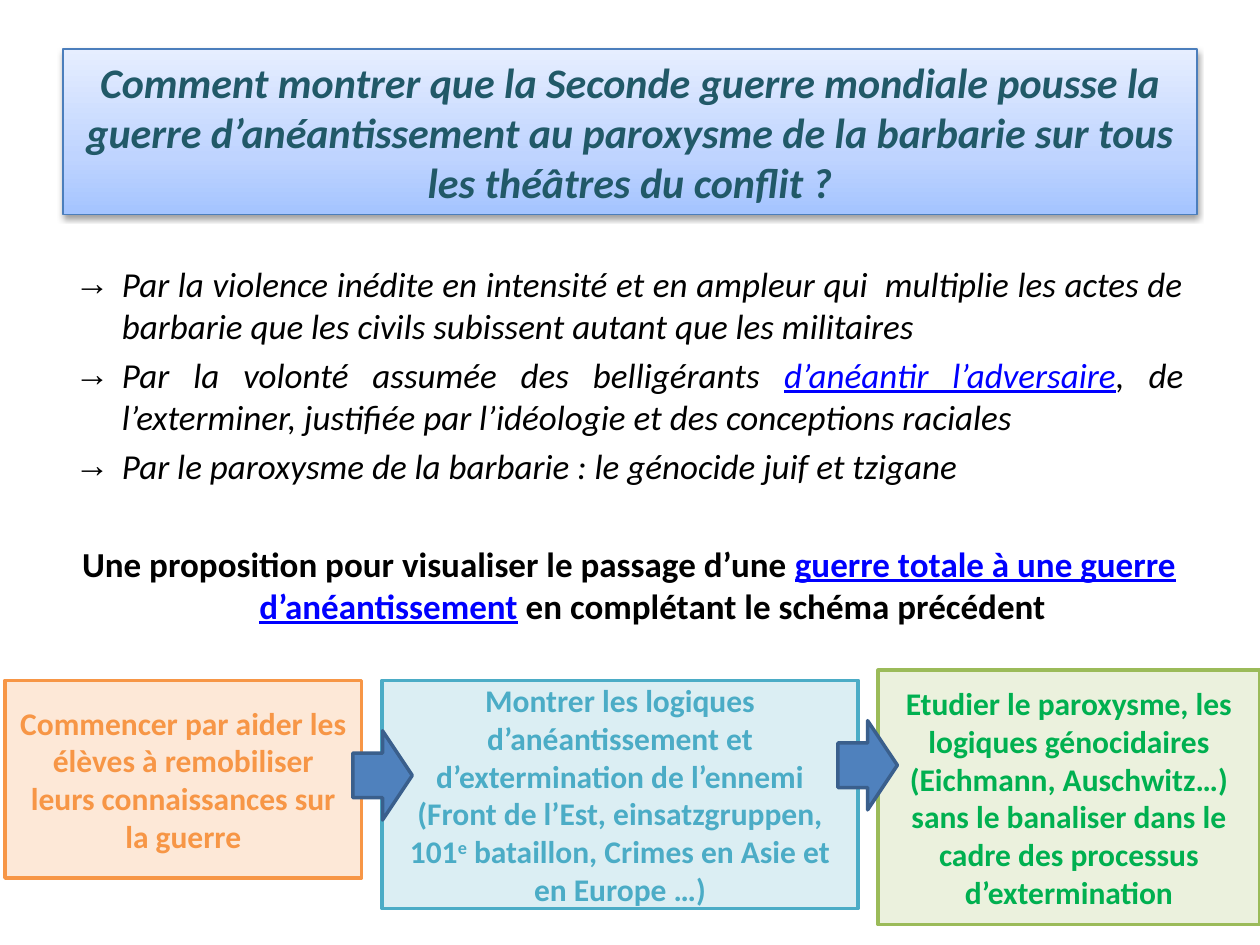
import copy

import pptx
import pptx.util
import pptx.dml.color
import pptx.enum.shapes
import pptx.enum.text
import pptx.oxml
import pptx.oxml.ns

Pt = pptx.util.Pt
SHAPE = pptx.enum.shapes.MSO_SHAPE
ALIGN = pptx.enum.text.PP_ALIGN
ANCHOR = pptx.enum.text.MSO_ANCHOR
NS = pptx.oxml.ns.nsdecls("a")
FONT = "Calibri"

COLORS = {
    "title": "215968", "title_line": "4B7EBC",
    "grad_low": "A4C4FF", "grad_mid": "BFD4FF", "grad_high": "E6EEFF",
    "text": "000000", "link": "0000FF",
    "orange": "F79646", "teal": "4BACC6", "olive": "9BBB59", "green": "00B050",
    "arrow": "4F81BD", "arrow_line": "3A5F8C",
}


def rgb(name):
    return pptx.dml.color.RGBColor.from_string(COLORS[name])


def add_run(p, text, size=18, color="text", bold=False, italic=False,
            underline=False, raised=False):
    r = p.add_run()
    r.text = text
    f = r.font
    f.name, f.size, f.bold, f.italic, f.underline = FONT, Pt(size), bold, italic, underline
    f.color.rgb = rgb(color)
    if raised:
        r._r.get_or_add_rPr().set("baseline", "30000")
    return r


def place(sp, box):
    sp.left, sp.top, sp.width, sp.height = (Pt(v) for v in box)


def set_line(sp, color, width):
    sp.line.color.rgb = rgb(color)
    sp.line.width = Pt(width)


def title_banner(s, box):
    sp = s.shapes.title
    place(sp, box)
    # Three-stop gradient, light at the top
    sp.fill.gradient()
    sp.fill.gradient_angle = 90
    gs = sp.fill.gradient_stops[0]._gs
    gs.addnext(copy.deepcopy(gs))
    stops = ((0, "grad_low"), (0.35, "grad_mid"), (1, "grad_high"))
    for stop, (pos, color) in zip(sp.fill.gradient_stops, stops):
        stop.position = pos
        stop.color.rgb = rgb(color)
    set_line(sp, "title_line", 0.75)
    # Soft shadow below
    sp.shadow.inherit = False
    sp._element.spPr.find(pptx.oxml.ns.qn("a:effectLst")).append(pptx.oxml.parse_xml(
        f'<a:outerShdw {NS} blurRad="{Pt(3.1)}" dist="{Pt(1.6)}" dir="5400000" '
        'rotWithShape="0"><a:srgbClr val="000000"><a:alpha val="38000"/>'
        '</a:srgbClr></a:outerShdw>'))
    tf = sp.text_frame
    tf.word_wrap = True
    tf.auto_size = pptx.enum.text.MSO_AUTO_SIZE.NONE
    tf.vertical_anchor = ANCHOR.MIDDLE
    p = tf.paragraphs[0]
    p.alignment = ALIGN.CENTER
    add_run(p, "Comment montrer que la Seconde guerre mondiale pousse la guerre "
               "d’anéantissement au paroxysme de la barbarie sur tous les théâtres "
               "du conflit ?", size=24, color="title", bold=True, italic=True)


def answer_list(s, box):
    sp = s.placeholders[1]
    place(sp, box)
    tf = sp.text_frame
    tf.word_wrap = True
    tf.auto_size = pptx.enum.text.MSO_AUTO_SIZE.NONE
    link = dict(color="link", underline=True)
    # Space before, whether it is an arrowed item, runs
    paragraphs = [
        (0, True, [("Par la violence inédite en intensité et en ampleur qui  multiplie les "
                    "actes de barbarie que les civils subissent autant que les militaires", {})]),
        (4, True, [("Par la volonté assumée des belligérants ", {}),
                   ("d’anéantir l’adversaire", link),
                   (", de l’exterminer, justifiée par l’idéologie et des conceptions "
                    "raciales", {})]),
        (4, True, [("Par le paroxysme de la barbarie : le génocide juif et tzigane", {})]),
        (32, False, [("Une proposition pour visualiser le passage d’une ", {}),
                     ("guerre totale à une guerre d’anéantissement", link),
                     (" en complétant le schéma précédent", {})]),
    ]
    for i, (space, item, runs) in enumerate(paragraphs):
        p = tf.add_paragraph() if i else tf.paragraphs[0]
        p.alignment = ALIGN.JUSTIFY if item else ALIGN.CENTER
        p.space_before = Pt(space)
        pPr = p._p.get_or_add_pPr()
        pPr.set("marL", str(Pt(27)))
        pPr.set("indent", str(Pt(-27)))
        bullet = '<a:buChar %s char="→"/>' if item else '<a:buNone %s/>'
        pPr.append(pptx.oxml.parse_xml(bullet % NS))
        for text, fmt in runs:
            add_run(p, text, size=20, bold=not item, italic=item, **fmt)


def step_box(s, box, color, alpha, runs, text_color):
    sp = s.shapes.add_shape(SHAPE.RECTANGLE, *(Pt(v) for v in box))
    sp.shadow.inherit = False
    sp.fill.solid()
    sp.fill.fore_color.rgb = rgb(color)
    clr = sp._element.spPr.find(".//" + pptx.oxml.ns.qn("a:srgbClr"))
    clr.append(pptx.oxml.parse_xml(f'<a:alpha {NS} val="{alpha * 1000}"/>'))
    set_line(sp, color, 2)
    tf = sp.text_frame
    tf.word_wrap = True
    tf.vertical_anchor = ANCHOR.MIDDLE
    p = tf.paragraphs[0]
    p.alignment = ALIGN.CENTER
    for text, raised in runs:
        add_run(p, text, color=text_color, bold=True, raised=raised)


def step_arrow(s, box):
    sp = s.shapes.add_shape(SHAPE.RIGHT_ARROW, *(Pt(v) for v in box))
    sp.shadow.inherit = False
    sp.fill.solid()
    sp.fill.fore_color.rgb = rgb("arrow")
    set_line(sp, "arrow_line", 2)


def process(s, box):
    x, y, w, h = box
    # Boxes: left and top offsets, width, height
    step_box(s, (x + 215.3, y + 5.8, 272.2, 130.3), "teal", 20, [
        ("Montrer les logiques d’anéantissement et d’extermination de l’ennemi "
         "(Front de l’Est, einsatzgruppen, 101", False),
        ("e", True),
        (" bataillon, Crimes en Asie et en Europe …)", False)], "teal")
    step_box(s, (x, y + 5.8, 203.8, 113), "orange", 21, [
        ("Commencer par aider les élèves à remobiliser leurs connaissances "
         "sur la guerre", False)], "orange")
    step_box(s, (x + w - 218.2, y, 218.2, h), "olive", 20, [
        ("Etudier le paroxysme, les logiques génocidaires (Eichmann, Auschwitz…) "
         "sans le banaliser dans le cadre des processus d’extermination", False)], "green")
    # Arrows across the gaps
    for dx, dy in ((198.7, 34.6), (475.9, 28.8)):
        step_arrow(s, (x + dx, y + dy, 34, 51))


def main():
    prs = pptx.Presentation()
    prs.slide_width, prs.slide_height = Pt(720), Pt(540)
    s = prs.slides.add_slide(prs.slide_layouts[1])
    title_banner(s, (36, 28, 648, 94.5))
    answer_list(s, (35.4, 146.2, 648, 152))
    process(s, (2.9, 383, 717.1, 145.4))
    prs.save("out.pptx")


if __name__ == "__main__":
    main()
